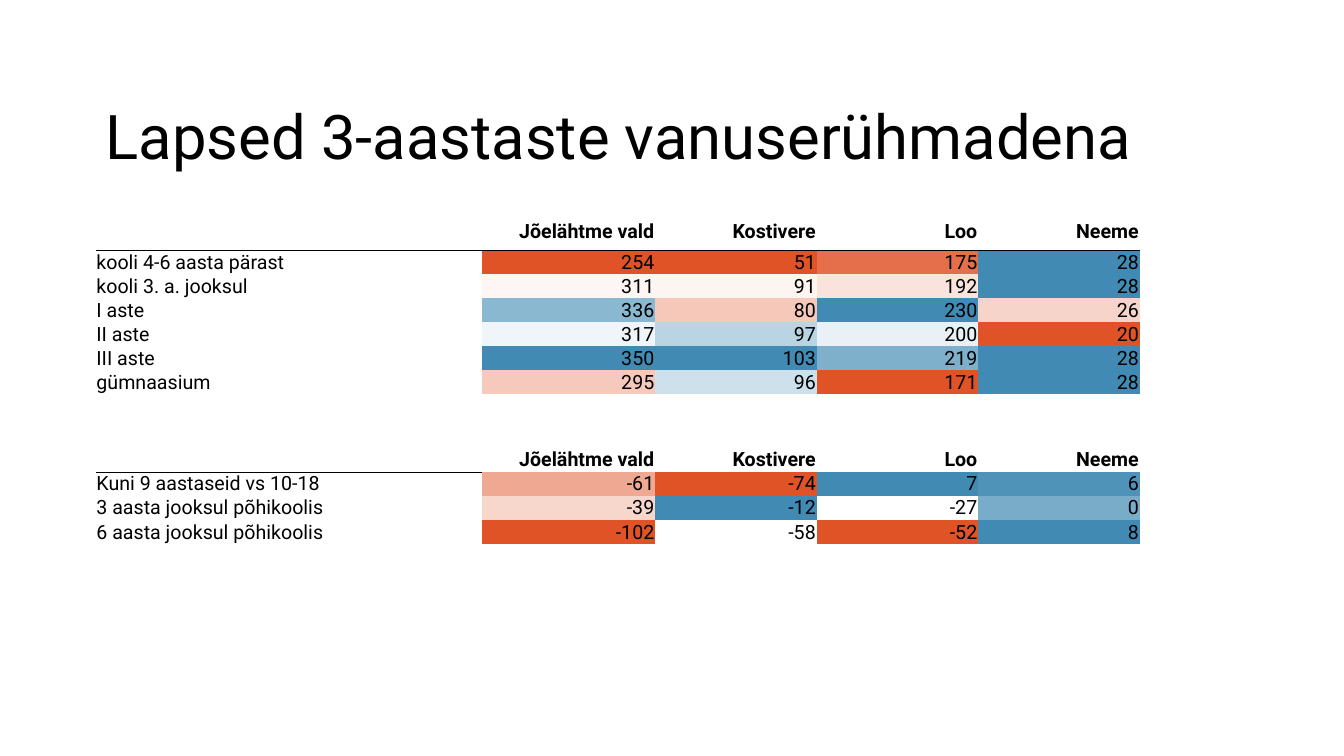
from dataclasses import dataclass

from lxml.etree import SubElement
from pptx import Presentation
from pptx.dml.color import RGBColor
from pptx.enum.text import MSO_ANCHOR, MSO_AUTO_SIZE, PP_ALIGN
from pptx.oxml.ns import qn
from pptx.util import Cm, Pt


@dataclass(frozen=True)
class Theme:
    font: str = "Roboto"
    ink: RGBColor = RGBColor(0, 0, 0)
    low: RGBColor = RGBColor(0xDF, 0x53, 0x27)
    middle: RGBColor = RGBColor(0xFF, 0xFF, 0xFF)
    high: RGBColor = RGBColor(0x41, 0x8A, 0xB3)
    title_size: Pt = Pt(44)
    cell_size: Pt = Pt(14)
    rule_width: Pt = Pt(0.5)


THEME = Theme()
PLAIN_TABLE_STYLE = "{2D5ABB26-0587-4C30-8999-92F81FD0307C}"
LEFT = Cm(2.41)
COLUMN_WIDTHS = [Cm(9.73), Cm(4.37), Cm(4.07), Cm(4.07), Cm(4.07)]
HEADER_HEIGHT, ROW_HEIGHT = Cm(0.76), Cm(0.6)
PLACES = ["Jõelähtme vald", "Kostivere", "Loo", "Neeme"]

AGE_GROUPS = {
    "kooli 4-6 aasta pärast": [254, 51, 175, 28],
    "kooli 3. a. jooksul": [311, 91, 192, 28],
    "I aste": [336, 80, 230, 26],
    "II aste": [317, 97, 200, 20],
    "III aste": [350, 103, 219, 28],
    "gümnaasium": [295, 96, 171, 28],
}
CHANGES = {
    "Kuni 9 aastaseid vs 10-18": [-61, -74, 7, 6],
    "3 aasta jooksul põhikoolis": [-39, -12, -27, 0],
    "6 aasta jooksul põhikoolis": [-102, -58, -52, 8],
}


def add_run(paragraph, text, size, bold=False):
    run = paragraph.add_run()
    run.text = text
    run.font.name = THEME.font
    run.font.size = size
    run.font.bold = bold
    run.font.color.rgb = THEME.ink


def median(values):
    ordered = sorted(values)
    half = len(ordered) // 2
    return (ordered[half] + ordered[-half - 1]) / 2


def blend(start, end, share):
    return RGBColor(*(round(a + (b - a) * share) for a, b in zip(start, end)))


def scale_color(value, pool):
    """Colour from low through the median to high within the pooled values."""
    bottom, centre, top = min(pool), median(pool), max(pool)
    if value == top:
        return THEME.high
    if value < centre:
        return blend(THEME.low, THEME.middle, (value - bottom) / (centre - bottom))
    return blend(THEME.middle, THEME.high, (value - centre) / (top - centre))


def fill_cell(cell, text, align=PP_ALIGN.RIGHT, anchor=MSO_ANCHOR.BOTTOM,
              bold=False, color=None):
    cell.margin_left = cell.margin_right = cell.margin_top = Cm(0.02)
    cell.margin_bottom = 0
    cell.vertical_anchor = anchor
    paragraph = cell.text_frame.paragraphs[0]
    paragraph.alignment = align
    add_run(paragraph, text, THEME.cell_size, bold)
    if color is None:
        cell.fill.background()
    else:
        cell.fill.solid()
        cell.fill.fore_color.rgb = color


def underline_cell(cell):
    properties = cell._tc.get_or_add_tcPr()
    border = SubElement(properties, qn("a:lnB"), w=str(THEME.rule_width))
    fill = SubElement(border, qn("a:solidFill"))
    SubElement(fill, qn("a:srgbClr"), val=str(THEME.ink))
    properties.insert(0, border)


def add_heat_table(slide, top, rows, pools, ruled_columns, header_anchor):
    """Table whose columns are coloured together within each pool."""
    height = HEADER_HEIGHT + ROW_HEIGHT * len(rows)
    table = slide.shapes.add_table(len(rows) + 1, len(COLUMN_WIDTHS), LEFT, top,
                                   sum(COLUMN_WIDTHS), height).table
    table.first_row = table.horz_banding = False
    table._tbl.tblPr.find(qn("a:tableStyleId")).text = PLAIN_TABLE_STYLE
    for column, width in zip(table.columns, COLUMN_WIDTHS):
        column.width = width
    for index, row in enumerate(table.rows):
        row.height = ROW_HEIGHT if index else HEADER_HEIGHT

    for column, heading in enumerate(["", *PLACES]):
        fill_cell(table.cell(0, column), heading, anchor=header_anchor, bold=True)
    for column in range(ruled_columns):
        underline_cell(table.cell(0, column))

    pool_values = {
        column: [values[member] for values in rows.values() for member in pool]
        for pool in pools for column in pool
    }
    for row, (label, values) in enumerate(rows.items(), start=1):
        fill_cell(table.cell(row, 0), label, align=PP_ALIGN.LEFT)
        for column, value in enumerate(values):
            fill_cell(table.cell(row, column + 1), str(value),
                      color=scale_color(value, pool_values[column]))


def set_title(slide, text):
    title = slide.shapes.title
    title.left, title.top = LEFT, Cm(1.68)
    title.width, title.height = Cm(29.03), Cm(3.68)
    frame = title.text_frame
    frame.word_wrap = True
    frame.auto_size = MSO_AUTO_SIZE.NONE
    frame.vertical_anchor = MSO_ANCHOR.MIDDLE
    paragraph = frame.paragraphs[0]
    paragraph.alignment = PP_ALIGN.LEFT
    paragraph.line_spacing = 0.9
    add_run(paragraph, text, THEME.title_size)


def main():
    presentation = Presentation()
    presentation.slide_width, presentation.slide_height = Cm(33.87), Cm(19.05)
    slide = presentation.slides.add_slide(presentation.slide_layouts[5])
    set_title(slide, "Lapsed 3-aastaste vanuserühmadena")
    add_heat_table(slide, Cm(5.54), AGE_GROUPS, [(0,), (1,), (2,), (3,)],
                   ruled_columns=5, header_anchor=MSO_ANCHOR.TOP)
    add_heat_table(slide, Cm(11.13), CHANGES, [(0, 3), (1,), (2,)],
                   ruled_columns=1, header_anchor=MSO_ANCHOR.BOTTOM)
    presentation.save("out.pptx")


if __name__ == "__main__":
    main()
